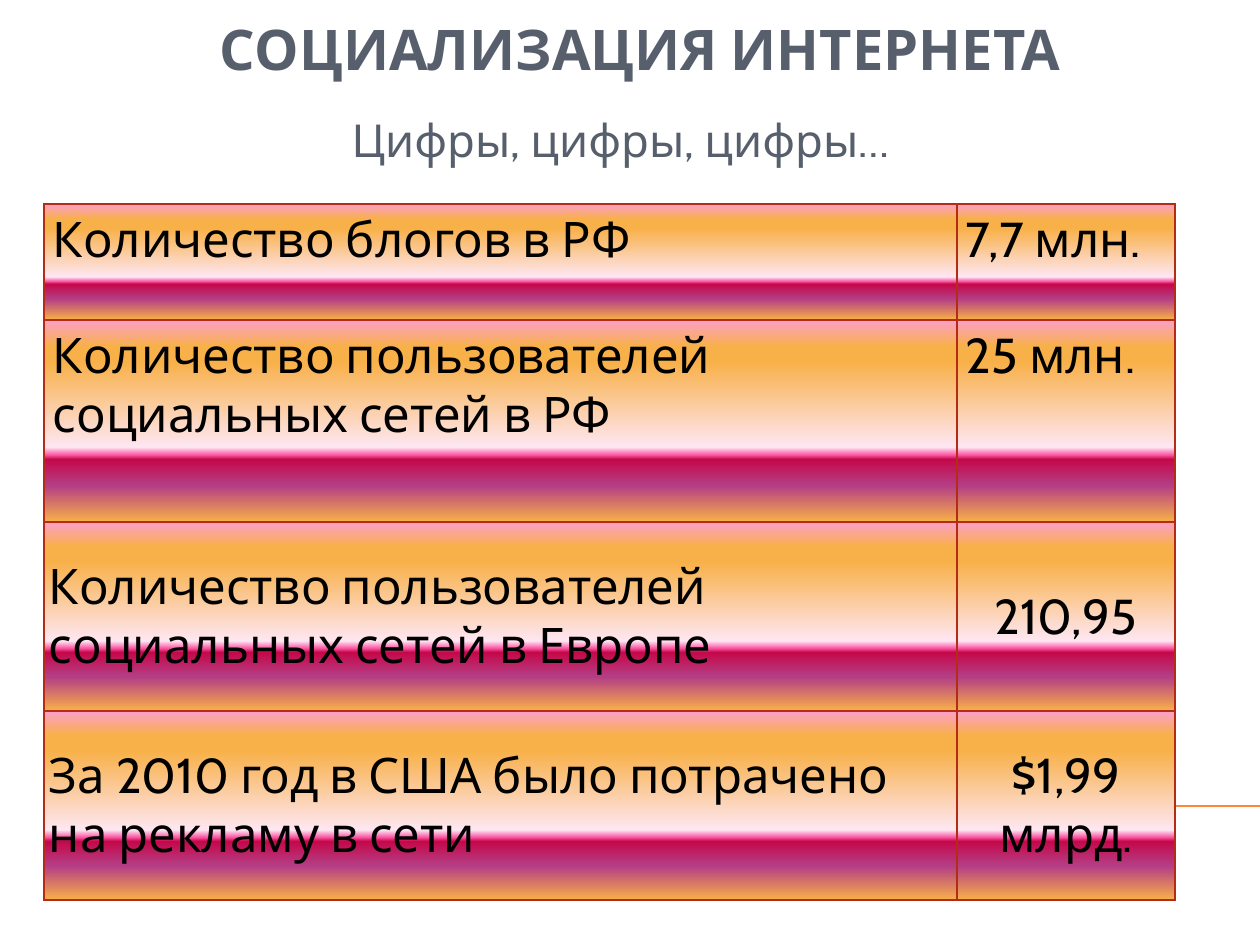
from lxml import etree
from pptx import Presentation
from pptx import util as u
from pptx.dml.color import RGBColor
from pptx.enum import shapes, text
from pptx.oxml import ns

SLATE = RGBColor(0x57, 0x5F, 0x6D)
ORANGE = RGBColor(0xFE, 0x86, 0x37)
BLACK = RGBColor(0, 0, 0)
BORDER = RGBColor(0xB3, 0x2C, 0x16)
PINK = RGBColor(0xFC, 0x9F, 0xCB)
AMBER = RGBColor(0xF8, 0xB0, 0x49)
BLUSH = RGBColor(0xFE, 0xE7, 0xF2)
ROSE = RGBColor(0xF9, 0x52, 0xA0)
CRIMSON = RGBColor(0xC5, 0x08, 0x49)
PURPLE = RGBColor(0xB4, 0x3E, 0x85)
SUNSET = [(0, PINK), (13, AMBER), (21, AMBER), (63, BLUSH),
          (67, ROSE), (69, CRIMSON), (82, PURPLE), (100, AMBER)]
LEFT, CENTER = text.PP_ALIGN.LEFT, text.PP_ALIGN.CENTER
TOP, MIDDLE = text.MSO_ANCHOR.TOP, text.MSO_ANCHOR.MIDDLE
COLUMNS = [913, 218]
HEIGHTS = [116, 202, 189, 189]
ROWS = [
    ("Количество блогов в РФ", "7,7 млн."),
    ("Количество пользователей социальных сетей в РФ", "25 млн."),
    ("Количество пользователей социальных сетей в Европе", "210,95"),
    ("За 2010 год в США было потрачено на рекламу в сети", "$1,99 млрд."),
]


def px(length):
    return u.Emu(round(length * 914400 / 126))


def add_child(parent, tag, **attributes):
    return etree.SubElement(parent, ns.qn(tag), attributes)


class SlideBuilder:
    """Draws styled elements on the current slide."""

    font_name = "Cabin"

    def __init__(self, slide):
        self.slide = slide

    def style(self, paragraph, size, color, align, bold=False):
        paragraph.alignment = align
        font = paragraph.font
        font.name, font.size, font.bold = self.font_name, u.Pt(size), bold
        font.color.rgb = color

    def line(self, x1, y1, x2, y2, color, width):
        connector = self.slide.shapes.add_connector(
            shapes.MSO_CONNECTOR.STRAIGHT, px(x1), px(y1), px(x2), px(y2))
        connector.line.color.rgb = color
        connector.line.width = u.Pt(width)
        add_child(connector._element.spPr, "a:effectLst")

    def text(self, x, y, width, height, words, size, anchor, bold=False):
        shape = self.slide.shapes.add_textbox(px(x), px(y), px(width), px(height))
        frame = shape.text_frame
        frame.word_wrap = True
        frame.vertical_anchor = anchor
        frame.text = words
        self.style(frame.paragraphs[0], size, SLATE, CENTER, bold)

    def paint_cell(self, cell, stops):
        properties = cell._tc.get_or_add_tcPr()
        for side in ("a:lnL", "a:lnR", "a:lnT", "a:lnB"):
            border = add_child(properties, side, w=str(u.Pt(1)))
            fill = add_child(border, "a:solidFill")
            add_child(fill, "a:srgbClr", val=str(BORDER))
        gradient = add_child(properties, "a:gradFill", rotWithShape="1")
        stop_list = add_child(gradient, "a:gsLst")
        for percent, color in stops:
            stop = add_child(stop_list, "a:gs", pos=str(percent * 1000))
            add_child(stop, "a:srgbClr", val=str(color))
        add_child(gradient, "a:lin", ang="5400000", scaled="0")

    def cell(self, cell, words, size, align, anchor, inset_x, inset_y):
        cell.text = words
        cell.vertical_anchor = anchor
        cell.margin_left = cell.margin_right = px(inset_x)
        cell.margin_top = cell.margin_bottom = px(inset_y)
        self.style(cell.text_frame.paragraphs[0], size, BLACK, align)
        self.paint_cell(cell, SUNSET)

    def table(self, x, y, columns, heights, rows):
        table = self.slide.shapes.add_table(
            len(rows), len(columns), px(x), px(y),
            px(sum(columns)), px(sum(heights))).table
        table.first_row = table.horz_banding = False
        for column, width in zip(table.columns, columns):
            column.width = px(width)
        for i, (row, height, values) in enumerate(zip(table.rows, heights, rows)):
            row.height = px(height)
            centered = i >= 2
            anchor, inset_x, inset_y = (MIDDLE, 5, 5) if centered else (TOP, 9, 6)
            for j, words in enumerate(values):
                align = CENTER if centered and j else LEFT
                self.cell(table.cell(i, j), words, 28, align, anchor, inset_x, inset_y)


def main():
    presentation = Presentation()
    presentation.slide_width, presentation.slide_height = px(1260), px(945)
    builder = SlideBuilder(presentation.slides.add_slide(presentation.slide_layouts[6]))
    builder.line(71, 806, 1260, 806, ORANGE, 0.75)
    builder.text(74, 0, 1133, 96, "СОЦИАЛИЗАЦИЯ ИНТЕРНЕТА", 32, MIDDLE, bold=True)
    builder.text(54, 106, 1133, 59, "Цифры, цифры, цифры…", 25.9, TOP)
    builder.table(44, 204, COLUMNS, HEIGHTS, ROWS)
    presentation.save("out.pptx")


if __name__ == "__main__":
    main()
